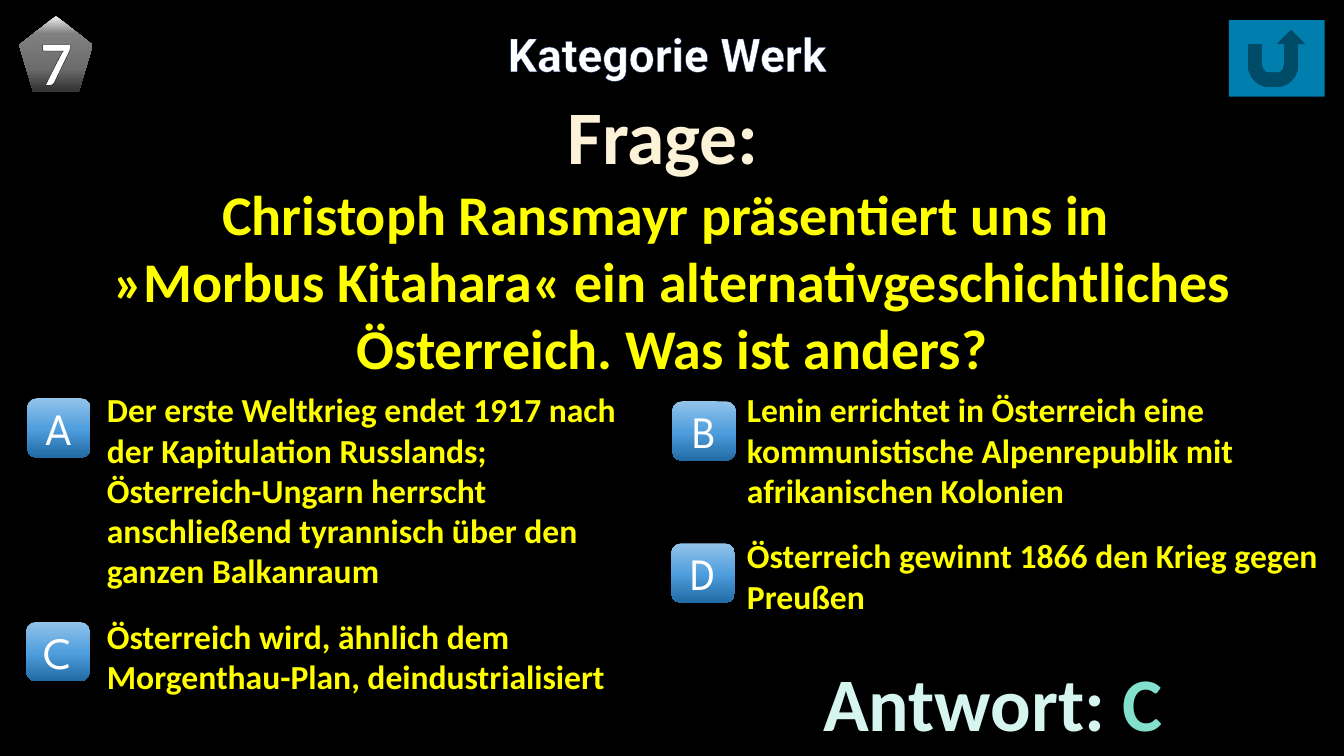
"""Build a quiz slide with a question, four choices and the answer."""
from lxml.etree import SubElement
from pptx import Presentation
from pptx.dml.color import RGBColor
from pptx.enum.shapes import MSO_SHAPE as Preset
from pptx.enum.text import MSO_ANCHOR as Anchor, MSO_AUTO_SIZE as AutoSize, PP_ALIGN as Align
from pptx.oxml.ns import qn
from pptx.util import Pt

BLACK = RGBColor(0x00, 0x00, 0x00)
WHITE = RGBColor(0xFF, 0xFF, 0xFF)
NAVY = RGBColor(0x00, 0x20, 0x60)
YELLOW = RGBColor(0xFF, 0xFF, 0x00)
CREAM = RGBColor(0xFB, 0xF2, 0xD7)
PALE_MINT = RGBColor(0xD5, 0xF5, 0xEE)
MINT = RGBColor(0x82, 0xE0, 0xCD)
SKY = RGBColor(0x00, 0xB0, 0xF0)
BLUE_STOPS = [(0, RGBColor(0x92, 0xC3, 0xEA)), (52, RGBColor(0x4F, 0x9E, 0xDD)),
              (100, RGBColor(0x20, 0x6A, 0xA5))]
GREY_STOPS = [(0, RGBColor(0xF2, 0xF2, 0xF2)), (23, RGBColor(0x80, 0x80, 0x80)),
              (69, RGBColor(0x6D, 0x6D, 0x6D)), (97, RGBColor(0x36, 0x36, 0x36))]

LEFT_CHOICES = [
    "Der erste Weltkrieg endet 1917 nach der Kapitulation Russlands; Österreich-Ungarn "
    "herrscht anschließend tyrannisch über den ganzen Balkanraum",
    "Österreich wird, ähnlich dem Morgenthau-Plan, deindustrialisiert",
]
RIGHT_CHOICES = [
    "Lenin errichtet in Österreich eine kommunistische Alpenrepublik mit afrikanischen Kolonien",
    "Österreich gewinnt 1866 den Krieg gegen Preußen",
]
QUESTION = ("Christoph Ransmayr präsentiert uns in \v"
            "»Morbus Kitahara« ein alternativgeschichtliches Österreich. Was ist anders?")
LETTERS = [("A", 19.4, 284.4), ("B", 480.2, 286.6), ("C", 18.7, 444.2), ("D", 479.5, 388.1)]


def place(shape, left, top, width, height):
    shape.left, shape.top, shape.width, shape.height = map(Pt, (left, top, width, height))


def style(paragraph, name, size, color, bold=True, align=Align.CENTER):
    paragraph.alignment = align
    font = paragraph.font
    font.name, font.size, font.bold = name, Pt(size), bold
    font.color.rgb = color


def outline_text(paragraph, color, width):
    for run in paragraph.runs:
        properties = run.font._element
        line = SubElement(properties, qn("a:ln"), w=str(Pt(width)))
        fill = SubElement(line, qn("a:solidFill"))
        SubElement(fill, qn("a:srgbClr"), val=str(color))
        properties.insert(0, line)


def add_text(slide, box, paragraphs):
    shape = slide.shapes.add_textbox(*map(Pt, box))
    frame = shape.text_frame
    frame.word_wrap = True
    for index, (text, size, color) in enumerate(paragraphs):
        paragraph = frame.add_paragraph() if index else frame.paragraphs[0]
        paragraph.text = text
        style(paragraph, "Calibri", size, color)
    return frame


def add_shape(slide, preset, box):
    shape = slide.shapes.add_shape(preset, *map(Pt, box))
    shape.shadow.inherit = False
    shape.line.fill.background()
    return shape


def add_badge(slide, preset, box, stops, text, font_name, size, bold):
    shape = add_shape(slide, preset, box)
    shape.fill.gradient()
    shape.fill.gradient_angle = 270
    stop_list = shape._element.spPr.find(qn("a:gradFill")).find(qn("a:gsLst"))
    for stop in list(stop_list):
        stop_list.remove(stop)
    for position, color in stops:
        stop = SubElement(stop_list, qn("a:gs"), pos=str(position * 1000))
        SubElement(stop, qn("a:srgbClr"), val=str(color))
    frame = shape.text_frame
    frame.margin_left = frame.margin_right = frame.margin_top = frame.margin_bottom = 0
    frame.vertical_anchor = Anchor.MIDDLE
    frame.word_wrap = False
    paragraph = frame.paragraphs[0]
    paragraph.text = text
    style(paragraph, font_name, size, WHITE, bold)
    return paragraph


def add_return_button(slide):
    button = add_shape(slide, Preset.ACTION_BUTTON_RETURN, (877.7, 14.4, 68.4, 54.7))
    button.fill.solid()
    button.fill.fore_color.rgb = SKY
    color = button._element.spPr.find(qn("a:solidFill"))[0]
    SubElement(color, qn("a:alpha"), val="72000")


def fill_title(title):
    place(title, 19.4, 14.4, 914.4, 47.5)
    title.text_frame.auto_size = AutoSize.NONE
    paragraph = title.text_frame.paragraphs[0]
    paragraph.text = "Kategorie Werk"
    style(paragraph, "Roboto", 33, WHITE)
    outline_text(paragraph, NAVY, 0.52)


def fill_choices(body, box, choices):
    place(body, *box)
    frame = body.text_frame
    frame.auto_size = AutoSize.NONE
    frame.text = "\n".join(choices)
    for paragraph in frame.paragraphs:
        properties = paragraph._p.get_or_add_pPr()
        properties.set("marL", "0")
        properties.set("indent", "0")
        SubElement(properties, qn("a:buNone"))
        paragraph.space_before, paragraph.space_after = Pt(0), Pt(18)
        style(paragraph, "Calibri", 24, YELLOW, align=Align.LEFT)


def main():
    presentation = Presentation()
    presentation.slide_width, presentation.slide_height = Pt(960), Pt(540)
    slide = presentation.slides.add_slide(presentation.slide_layouts[3])
    slide.background.fill.solid()
    slide.background.fill.fore_color.rgb = BLACK

    title, left_body, right_body = slide.placeholders
    fill_title(title)
    add_text(slide, (0, 59.8, 960, 218.2), [("Frage: ", 54, CREAM), (QUESTION, 40, YELLOW)])
    answer = add_text(slide, (457.9, 465.1, 502.6, 72.7), [("Antwort: ", 54, PALE_MINT)])
    solution = answer.paragraphs[0].add_run()
    solution.text = "C"
    solution.font.color.rgb = MINT

    add_return_button(slide)
    number = add_badge(slide, Preset.REGULAR_PENTAGON, (13.7, 11.5, 52.6, 54),
                       GREY_STOPS, "7", "Lato", 40, True)
    outline_text(number, BLACK, 1.06)
    fill_choices(left_body, (69.1, 274.3, 384.5, 257.8), LEFT_CHOICES)
    fill_choices(right_body, (526.3, 274.3, 437.8, 170.6), RIGHT_CHOICES)
    for letter, left, top in LETTERS:
        add_badge(slide, Preset.ROUNDED_RECTANGLE, (left, top, 45.4, 42.5),
                  BLUE_STOPS, letter, "League Spartan", 32, False)
    presentation.save("out.pptx")


if __name__ == "__main__":
    main()
